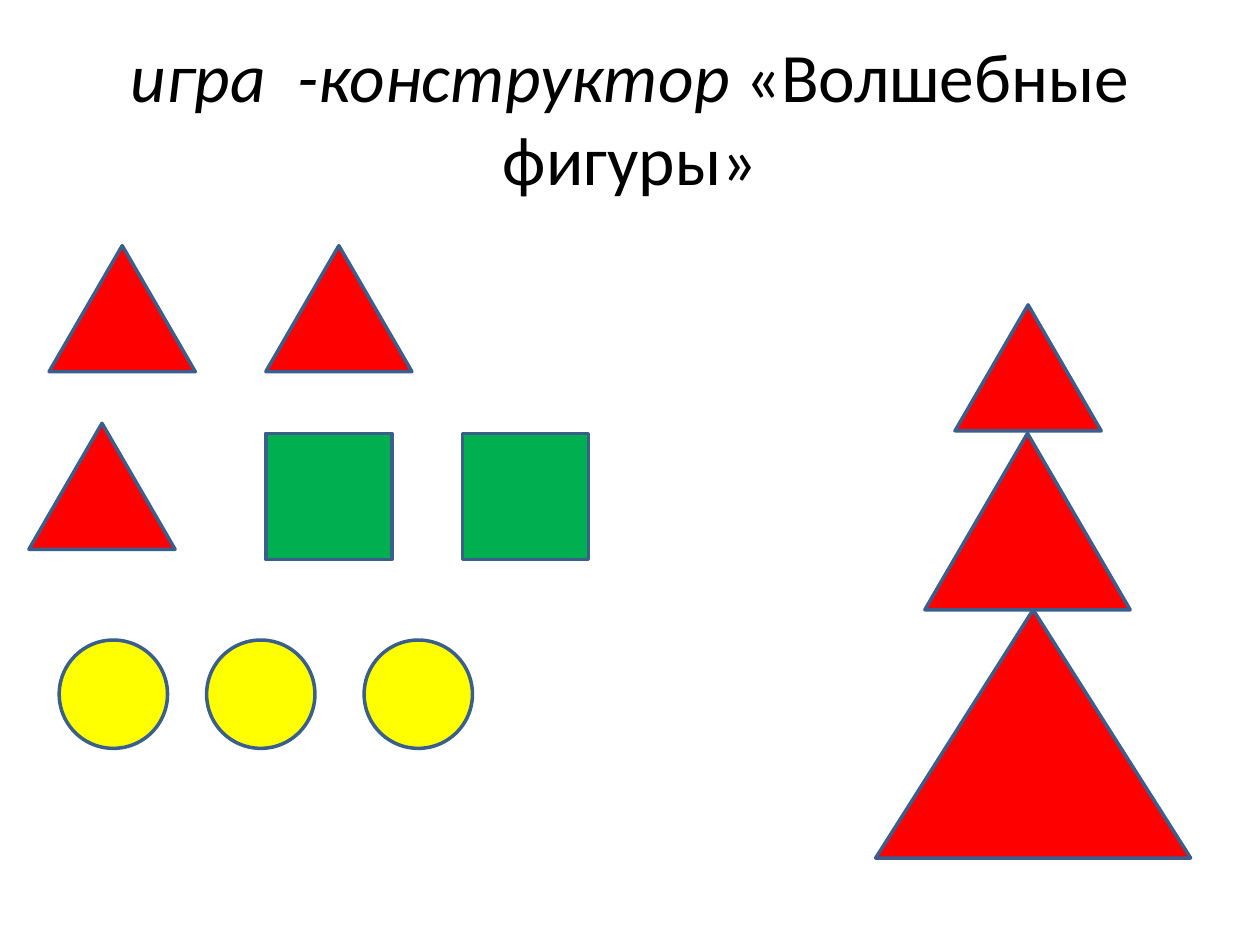
from dataclasses import dataclass

from pptx import Presentation
from pptx.dml.color import RGBColor
from pptx.enum.shapes import MSO_SHAPE as Shape
from pptx.enum.text import MSO_ANCHOR as Anchor, PP_ALIGN as Align
from pptx.util import Inches, Pt

COLUMNS, ROWS = 10, 7.5


@dataclass(frozen=True)
class Theme:
    font: str = "Calibri"
    title_size: float = 39.6
    outline_width: float = 2
    text: str = "000000"
    outline: str = "3A5F8C"
    triangle: str = "FF0000"
    square: str = "00B050"
    circle: str = "FFFF00"
    background: str = "FFFFFF"


THEME = Theme()


def color(value):
    return RGBColor.from_string(value)


def set_format(target, values):
    for name, value in values.items():
        setattr(target, name, value)


class Board:
    """A slide divided into a grid of columns and rows."""

    def __init__(self, presentation):
        self.slide = presentation.slides.add_slide(presentation.slide_layouts[6])
        self.column = presentation.slide_width / COLUMNS
        self.row = presentation.slide_height / ROWS
        background = self.slide.background.fill
        background.solid()
        background.fore_color.rgb = color(THEME.background)

    def box(self, left, top, width, height):
        return (round(left * self.column), round(top * self.row),
                round(width * self.column), round(height * self.row))

    def add_title(self, runs, *place):
        frame = self.slide.shapes.add_textbox(*self.box(*place)).text_frame
        set_format(frame, {"word_wrap": True, "vertical_anchor": Anchor.MIDDLE})
        paragraph = frame.paragraphs[0]
        paragraph.alignment = Align.CENTER
        for text, italic in runs:
            run = paragraph.add_run()
            run.text = text
            set_format(run.font, {"name": THEME.font, "size": Pt(THEME.title_size),
                                  "italic": italic})
            run.font.color.rgb = color(THEME.text)

    def add_figure(self, kind, fill, *place):
        shape = self.slide.shapes.add_shape(kind, *self.box(*place))
        shape.shadow.inherit = False
        shape.fill.solid()
        shape.fill.fore_color.rgb = color(fill)
        shape.line.color.rgb = color(THEME.outline)
        shape.line.width = Pt(THEME.outline_width)

    def add_figures(self, kind, fill, corners, width, height):
        for left, top in corners:
            self.add_figure(kind, fill, left, top, width, height)


def main():
    presentation = Presentation()
    set_format(presentation, {"slide_width": Inches(10), "slide_height": Inches(7.5)})
    board = Board(presentation)

    # Title
    board.add_title([("игра  -конструктор ", True), ("«Волшебные фигуры»", False)],
                    0.5, 0.3, 9, 1.25)

    # Loose figures on the left
    board.add_figures(Shape.ISOSCELES_TRIANGLE, THEME.triangle,
                      [(0.39, 1.95), (0.23, 3.36), (2.11, 1.95)], 1.16, 1)
    board.add_figures(Shape.RECTANGLE, THEME.square,
                      [(left, 3.44) for left in (2.11, 3.67)], 1, 1)
    board.add_figures(Shape.FLOWCHART_CONNECTOR, THEME.circle,
                      [(left, 5.08) for left in (0.47, 1.64, 2.89)], 0.86, 0.86)

    # Fir tree built from triangles, top to bottom
    tree = [(7.58, 2.42, 1.16, 1), (7.34, 3.44, 1.63, 1.4), (6.95, 4.84, 2.5, 1.97)]
    for tier in tree:
        board.add_figure(Shape.ISOSCELES_TRIANGLE, THEME.triangle, *tier)

    presentation.save("out.pptx")


if __name__ == "__main__":
    main()
